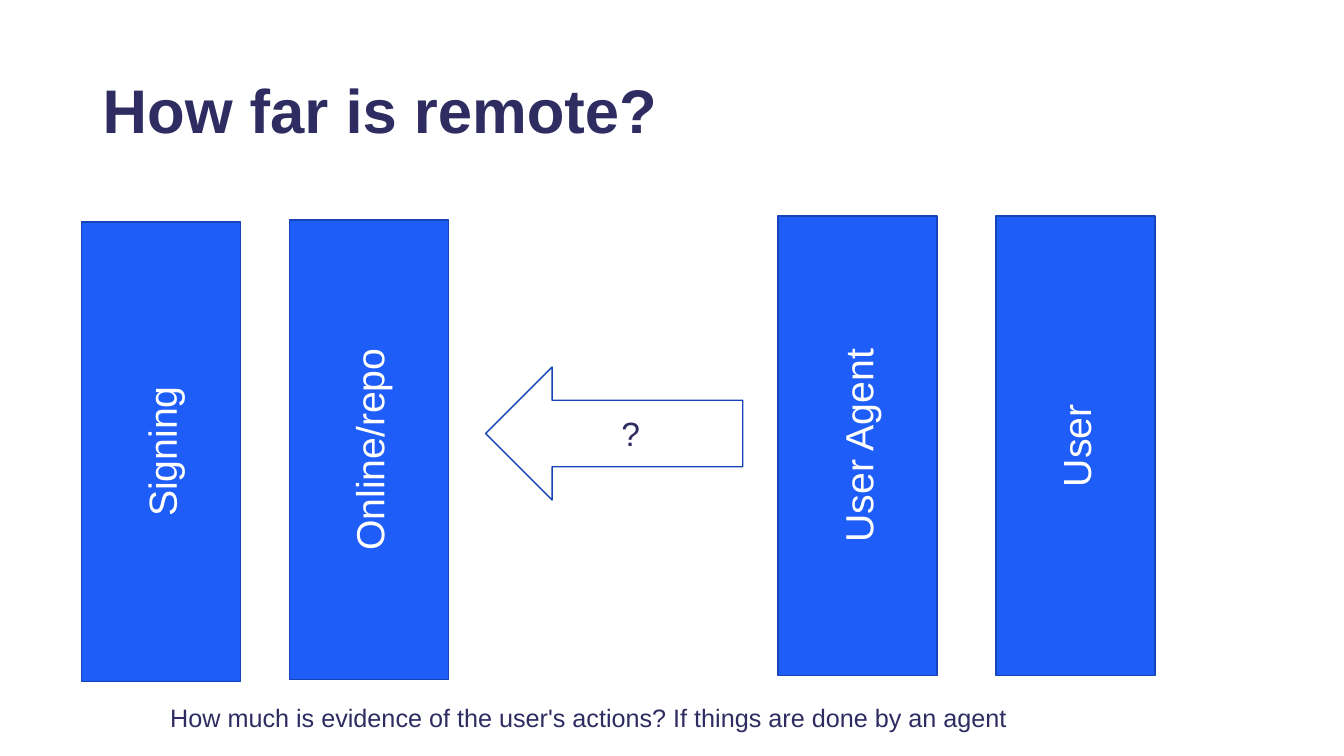
from pptx import Presentation
from pptx.dml.color import RGBColor
from pptx.enum.shapes import MSO_SHAPE as Shape
from pptx.enum.text import MSO_ANCHOR as Anchor, PP_ALIGN as Align
from pptx.util import Cm, Pt

COLORS = {"ink": "2E2C61", "bar": "1E5DF8", "outline": "1645B7", "white": "FFFFFF"}
FONT = "Arial"
BAR_WIDTH, BAR_HEIGHT = 4.01, 11.58
# label, left, top
BARS = [
    ("Signing", 2.06, 5.59),
    ("Online/repo", 7.29, 5.54),
    ("User Agent", 19.61, 5.44),
    ("User", 25.1, 5.44),
]


def color(name):
    return RGBColor.from_string(COLORS[name])


def write(shape, text, size, ink, align=Align.LEFT, anchor=Anchor.MIDDLE, bold=False):
    frame = shape.text_frame
    frame.word_wrap = True
    frame.vertical_anchor = anchor
    paragraph = frame.paragraphs[0]
    paragraph.alignment = align
    run = paragraph.add_run()
    run.text = text
    run.font.name = FONT
    run.font.size = Pt(size)
    run.font.bold = bold
    run.font.color.rgb = color(ink)
    return paragraph


def add_block(slide, kind, box, fill):
    shape = slide.shapes.add_shape(kind, *map(Cm, box))
    shape.shadow.inherit = False
    shape.fill.solid()
    shape.fill.fore_color.rgb = color(fill)
    shape.line.color.rgb = color("outline")
    shape.line.width = Pt(1)
    return shape


def add_title(slide, box, text):
    title = slide.shapes.add_textbox(*map(Cm, box))
    write(title, text, 44, "ink", bold=True).line_spacing = 0.9


def add_bar(slide, box, label):
    """Fill the upright box with a bar turned so its label reads upwards."""
    left, top, width, height = box
    shift = (height - width) / 2
    bar = add_block(slide, Shape.RECTANGLE,
                    (left - shift, top + shift, height, width), "bar")
    bar.rotation = 270
    write(bar, label, 28, "white", Align.CENTER)


def add_question_arrow(slide, box):
    arrow = add_block(slide, Shape.LEFT_ARROW, box, "white")
    write(arrow, "?", 24, "ink", Align.CENTER)


def add_caption(slide, box, text):
    caption = slide.shapes.add_textbox(*map(Cm, box))
    write(caption, text, 18, "ink", anchor=Anchor.TOP)


def main():
    presentation = Presentation()
    presentation.slide_width = Cm(33.87)
    presentation.slide_height = Cm(19.05)
    slide = presentation.slides.add_slide(presentation.slide_layouts[6])

    add_title(slide, (2.34, 1.02, 29.21, 3.68), "How far is remote?")
    for label, left, top in BARS:
        add_bar(slide, (left, top, BAR_WIDTH, BAR_HEIGHT), label)
    add_question_arrow(slide, (12.24, 9.25, 6.48, 3.35))
    add_caption(slide, (4.04, 17.58, 25.45, 1.02),
                "How much is evidence of the user's actions? "
                "If things are done by an agent")

    presentation.save("out.pptx")


if __name__ == "__main__":
    main()
